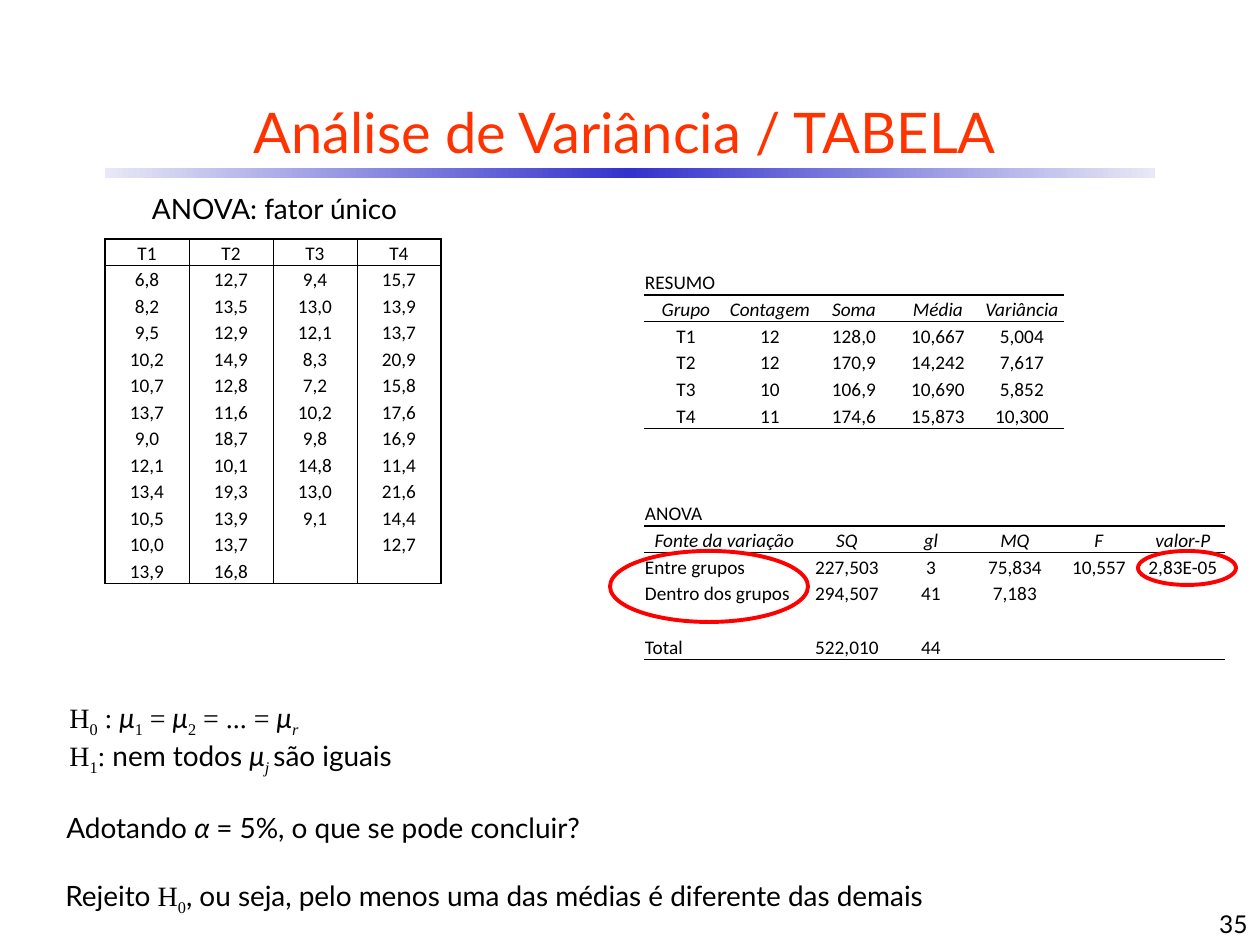
from copy import deepcopy

from lxml.etree import SubElement
from pptx import Presentation
from pptx.dml.color import RGBColor
from pptx.enum.shapes import MSO_SHAPE
from pptx.enum.text import MSO_ANCHOR, PP_ALIGN
from pptx.oxml.ns import qn
from pptx.util import Emu, Pt

COLORS = {"text": "000000", "title": "FF3300", "mark": "FF0000", "paper": "FFFFFF",
          "bar_edge": "E8E8F6", "bar_mid": "3333CC"}
NO_STYLE = "{2D5ABB26-0587-4C30-8999-92F81FD0307C}"
STYLES = {"plain": ("Lato", False, False), "var": ("Lato", True, False),
          "math": ("Times New Roman", False, False), "sub": ("Times New Roman", False, True),
          "subvar": ("Times New Roman", True, True)}

SAMPLES = """T1|T2|T3|T4
6,8|12,7|9,4|15,7
8,2|13,5|13,0|13,9
9,5|12,9|12,1|13,7
10,2|14,9|8,3|20,9
10,7|12,8|7,2|15,8
13,7|11,6|10,2|17,6
9,0|18,7|9,8|16,9
12,1|10,1|14,8|11,4
13,4|19,3|13,0|21,6
10,5|13,9|9,1|14,4
10,0|13,7||12,7
13,9|16,8||"""

SUMMARY = """RESUMO||||
Grupo|Contagem|Soma|Média|Variância
T1|12|128,0|10,667|5,004
T2|12|170,9|14,242|7,617
T3|10|106,9|10,690|5,852
T4|11|174,6|15,873|10,300"""

ANOVA = """ANOVA|||||
Fonte da variação|SQ|gl|MQ|F|valor-P
Entre grupos|227,503|3|75,834|10,557|2,83E-05
Dentro dos grupos|294,507|41|7,183||
|||||
Total|522,010|44|||"""

HYPOTHESES = [
    [("H", "math"), ("0", "sub"), (" : ", "math"), ("μ", "var"), ("1", "sub"), (" = ", "math"),
     ("μ", "var"), ("2", "sub"), (" = ... = ", "math"), ("μ", "var"), ("r", "subvar")],
    [("H", "math"), ("1", "sub"), (":", "math"), (" nem todos ", "plain"), ("μ", "var"),
     ("j ", "subvar"), ("são iguais", "plain")]]
QUESTION = [[("Adotando ", "plain"), ("α ", "var"), ("= 5%, o que se pode concluir?", "plain")]]
ANSWER = [[("Rejeito ", "plain"), ("H", "math"), ("0", "sub"),
           (", ou seja, pelo menos uma das médias é diferente das demais", "plain")]]


def px(n):
    """Turn px into EMU at 126 px to the inch."""
    return Emu(round(n * 914400 / 126))


def rgb(name):
    """Return a named colour."""
    return RGBColor.from_string(COLORS[name])


def set_font(font, size, name="Lato", color="text", italic=False):
    """Format a font."""
    font.size, font.name, font.italic = Pt(size), name, italic
    font.color.rgb = rgb(color)


def set_title(s, text):
    """Place and fill the title placeholder."""
    sp = s.shapes.title
    sp.left, sp.top, sp.width, sp.height = map(px, (42, 84, 1166, 95))
    tf = sp.text_frame
    tf.text, tf.vertical_anchor = text, MSO_ANCHOR.MIDDLE
    tf.paragraphs[0].alignment = PP_ALIGN.CENTER
    set_font(tf.paragraphs[0].font, 32, color="title")


def add_bar(s, x, y, w, h):
    """Add the gradient rule below the title."""
    sp = s.shapes.add_shape(MSO_SHAPE.RECTANGLE, px(x), px(y), px(w), px(h))
    sp.shadow.inherit = False
    sp.line.fill.background()
    sp.fill.gradient()
    sp.fill.gradient_angle = 0
    gs_lst = sp.fill._fill._gradFill.find(qn("a:gsLst"))
    gs_lst.insert(1, deepcopy(gs_lst[0]))
    for stop, pos, name in zip(sp.fill.gradient_stops, (0, 0.5, 1), ("bar_edge", "bar_mid", "bar_edge")):
        stop.position = pos
        stop.color.rgb = rgb(name)


def add_text(s, x, y, w, h, text, size=16, align=PP_ALIGN.LEFT, anchor=MSO_ANCHOR.TOP):
    """Add a text box of one uniform line."""
    tf = s.shapes.add_textbox(px(x), px(y), px(w), px(h)).text_frame
    tf.word_wrap, tf.vertical_anchor = True, anchor
    p = tf.paragraphs[0]
    p.text, p.alignment = text, align
    set_font(p.font, size)


def add_rich_text(s, x, y, w, h, lines):
    """Add a text box whose lines are lists of styled runs."""
    tf = s.shapes.add_textbox(px(x), px(y), px(w), px(h)).text_frame
    tf.word_wrap = True
    for i, line in enumerate(lines):
        p = tf.add_paragraph() if i else tf.paragraphs[0]
        for text, style in line:
            name, italic, sub = STYLES[style]
            r = p.add_run()
            r.text = text
            set_font(r.font, 16, name, italic=italic)
            if sub:
                r._r.get_or_add_rPr().set("baseline", "-25000")


def set_border(cell, side, width):
    """Draw one side of a cell, or none when it has no width."""
    ln = SubElement(cell._tc.get_or_add_tcPr(), qn("a:ln" + side), w=str(Pt(width or 0)))
    if width:
        fill = SubElement(ln, qn("a:solidFill"))
        SubElement(fill, qn("a:srgbClr"), val=COLORS["text"])
    else:
        SubElement(ln, qn("a:noFill"))


def add_table(s, x, y, h, widths, data, rows, cols=None, left=(), italic_row=None, fill=None):
    """Add a table; rows and cols map grid line numbers to line widths."""
    cols = cols or {}
    grid = [line.split("|") for line in data.splitlines()]
    frame = s.shapes.add_table(len(grid), len(widths), px(x), px(y), px(sum(widths)), px(h))
    tbl = frame.table
    tbl.first_row = tbl.horz_banding = False
    tbl._tbl.tblPr.find(qn("a:tableStyleId")).text = NO_STYLE
    for col, w in zip(tbl.columns, widths):
        col.width = px(w)
    for i, line in enumerate(grid):
        tbl.rows[i].height = px(h / len(grid))
        for j, text in enumerate(line):
            cell = tbl.cell(i, j)
            cell.margin_left = cell.margin_right = cell.margin_top = px(1)
            cell.margin_bottom = 0
            cell.vertical_anchor = MSO_ANCHOR.BOTTOM
            p = cell.text_frame.paragraphs[0]
            p.text = text
            p.alignment = PP_ALIGN.LEFT if (i, j) in left else PP_ALIGN.CENTER
            set_font(p.font, 11, "Calibri", italic=i == italic_row)
            for side, width in (("L", cols.get(j)), ("R", cols.get(j + 1)),
                                ("T", rows.get(i)), ("B", rows.get(i + 1))):
                set_border(cell, side, width)
            if fill:
                cell.fill.solid()
                cell.fill.fore_color.rgb = rgb(fill)
            else:
                cell.fill.background()


def add_ring(s, x, y, w, h):
    """Add an outlined ellipse around a result."""
    sp = s.shapes.add_shape(MSO_SHAPE.OVAL, px(x), px(y), px(w), px(h))
    sp.shadow.inherit = False
    sp.fill.background()
    sp.line.color.rgb = rgb("mark")
    sp.line.width = Pt(2.25)


def main():
    """Build the slide."""
    prs = Presentation()
    prs.slide_width, prs.slide_height = px(1260), px(945)
    s = prs.slides.add_slide(prs.slide_layouts[5])
    add_bar(s, 105, 168, 1050, 10)
    set_title(s, "Análise de Variância / TABELA")
    add_text(s, 96, 185, 357, 47, "ANOVA: fator único", align=PP_ALIGN.CENTER)
    rules = {1: 1, 2: 0.5, 6: 1}
    add_table(s, 644, 268, 161, [84] * 5, SUMMARY, rules, left={(0, 0)}, italic_row=1)
    add_table(s, 644, 499, 161, [161] + [84] * 5, ANOVA, rules,
              left={(0, 0), (2, 0), (3, 0), (5, 0)}, italic_row=1)
    add_table(s, 105, 239, 345, [84] * 4, SAMPLES, {0: 1, 1: 0.5, 13: 1},
              cols={0: 1, 1: 0.5, 2: 0.5, 3: 0.5, 4: 1}, fill="paper")
    add_rich_text(s, 57, 694, 431, 81, HYPOTHESES)
    add_rich_text(s, 54, 804, 1082, 47, QUESTION)
    add_rich_text(s, 53, 872, 1082, 47, ANSWER)
    add_text(s, 998, 882, 262, 63, "35", 14, PP_ALIGN.RIGHT, MSO_ANCHOR.BOTTOM)
    add_ring(s, 1138, 551, 98, 34)
    add_ring(s, 610, 551, 198, 71)
    prs.save("out.pptx")


if __name__ == "__main__":
    main()
